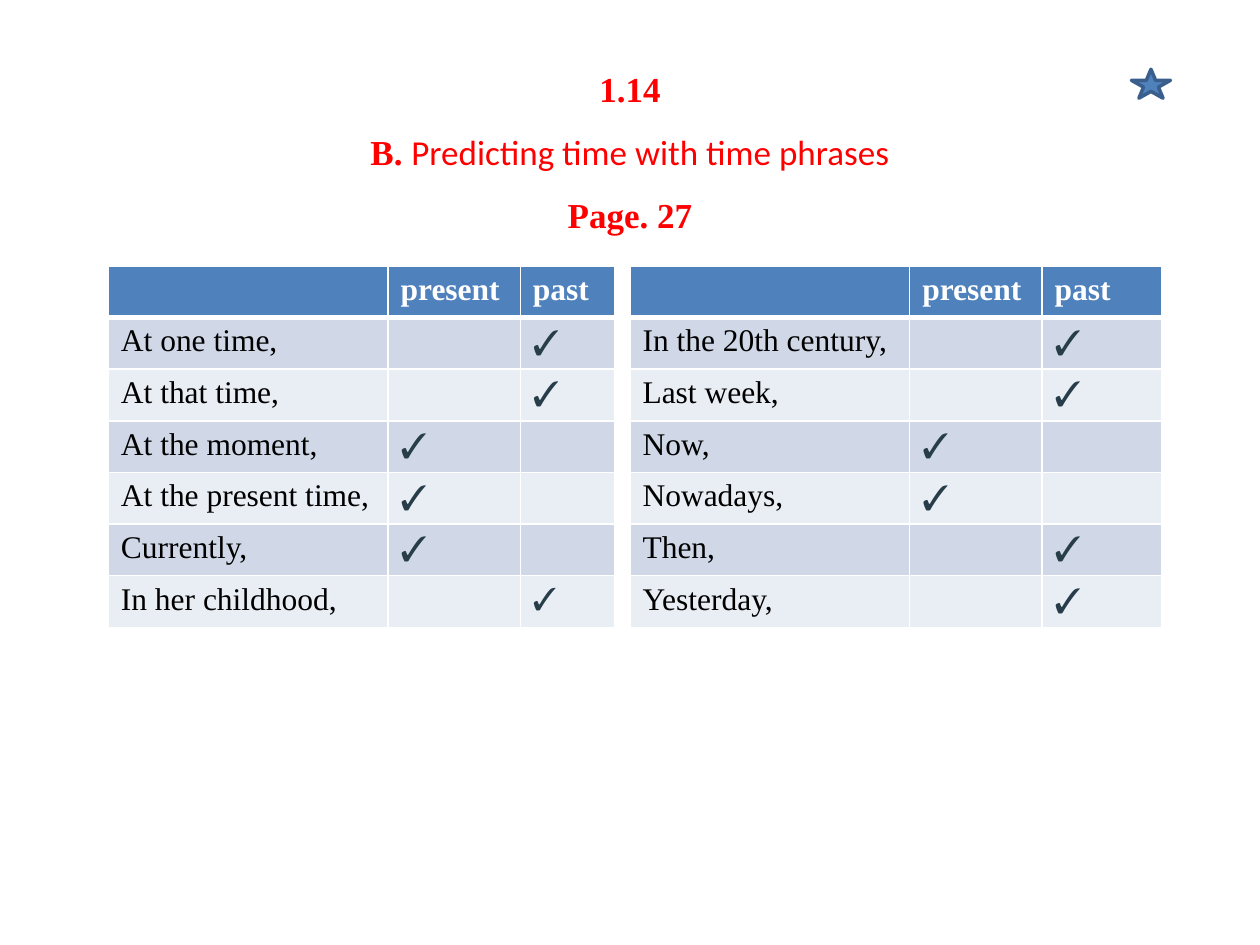
"""Build a slide that sorts time phrases into present and past."""
import pptx
import pptx.dml.color
import pptx.enum.shapes
import pptx.enum.text
import pptx.oxml
import pptx.oxml.ns
import pptx.util
from pptx.util import Inches, Pt

SERIF = "Times New Roman"
TITLE = [
    [("1.14", SERIF, True)],
    [("B. ", SERIF, True), ("Predicting time with time phrases", "Calibri", False)],
    [("Page. 27", SERIF, True)],
]
TENSES = ["present", "past"]
TABLES = [
    {"left": 0.86, "widths": [2.22, 1.05, 0.75], "phrases": [
        ("At one time,", "past", 20),
        ("At that time,", "past", 20),
        ("At the moment,", "present", 20),
        ("At the present time,", "present", 20),
        ("Currently,", "present", 20),
        ("In her childhood,", "past", 18),
    ]},
    {"left": 5, "widths": [2.22, 1.05, 0.95], "phrases": [
        ("In the 20th century,", "past", 20),
        ("Last week,", "past", 20),
        ("Now,", "present", 20),
        ("Nowadays,", "present", 20),
        ("Then,", "past", 20),
        ("Yesterday,", "past", 20),
    ]},
]
TABLE_TOP, ROW_HEIGHT = 2.11, 0.41
BLUE, BANDS = "4F81BD", ["E9EDF4", "D0D8E8"]


def color(value):
    return pptx.dml.color.RGBColor.from_string(value)


def paint(shape, value):
    shape.fill.solid()
    shape.fill.fore_color.rgb = color(value)


def style(span, size, value, bold=False, name=SERIF):
    span.font.name, span.font.size, span.font.bold = name, Pt(size), bold
    span.font.color.rgb = color(value)


def add_borders(cell, row):
    weights = {"lnL": 1, "lnR": 1, "lnT": 3 if row == 1 else 1, "lnB": 3 if row == 0 else 1}
    properties = cell._tc.get_or_add_tcPr()
    for position, (tag, weight) in enumerate(weights.items()):
        border = pptx.oxml.parse_xml(
            f'<a:{tag} {pptx.oxml.ns.nsdecls("a")} w="{Pt(weight)}">'
            '<a:solidFill><a:srgbClr val="FFFFFF"/></a:solidFill>'
            f'</a:{tag}>')
        properties.insert(position, border)


def fill_cell(cell, row, text, size, value, bold):
    paint(cell, BANDS[row % 2] if row else BLUE)
    add_borders(cell, row)
    if text:
        cell.text_frame.text = text
        style(cell.text_frame.paragraphs[0].runs[0], size, value, bold)


def add_title(page):
    box = page.shapes.title
    box.left, box.top, box.width, box.height = 0, 0, Inches(10), Inches(7.5)
    frame = box.text_frame
    frame.word_wrap = True
    frame.auto_size = pptx.enum.text.MSO_AUTO_SIZE.NONE
    frame.vertical_anchor = pptx.enum.text.MSO_ANCHOR.TOP
    frame.margin_top = Inches(0.37)
    for index, line in enumerate(TITLE):
        paragraph = frame.add_paragraph() if index else frame.paragraphs[0]
        paragraph.alignment = pptx.enum.text.PP_ALIGN.CENTER
        paragraph.line_spacing = 1.5
        for text, name, bold in line:
            span = paragraph.add_run()
            span.text = text
            style(span, 20, "FF0000", bold, name)


def add_phrase_table(page, left, widths, phrases):
    count = len(phrases) + 1
    table = page.shapes.add_table(
        count, len(widths), Inches(left), Inches(TABLE_TOP),
        Inches(sum(widths)), Inches(ROW_HEIGHT * count)).table
    table.horz_banding = False
    for column, width in zip(table.columns, widths):
        column.width = Inches(width)
    for row in table.rows:
        row.height = Inches(ROW_HEIGHT)
    for column, heading in enumerate([""] + TENSES):
        fill_cell(table.cell(0, column), 0, heading, 18, "FFFFFF", True)
    for row, (phrase, tense, size) in enumerate(phrases, 1):
        fill_cell(table.cell(row, 0), row, phrase, 18, "000000", False)
        for column, heading in enumerate(TENSES, 1):
            mark = "✓" if heading == tense else ""
            fill_cell(table.cell(row, column), row, mark, size, "273D49", False)


def add_star(page):
    star = page.shapes.add_shape(
        pptx.enum.shapes.MSO_SHAPE.STAR_5_POINT,
        Inches(8.98), Inches(0.55), Inches(0.31), Inches(0.23))
    star.shadow.inherit = False
    paint(star, BLUE)
    star.line.color.rgb = color("3A5F8C")
    star.line.width = Pt(2)


def main():
    deck = pptx.Presentation()
    deck.slide_width, deck.slide_height = Inches(10), Inches(7.5)
    page = deck.slides.add_slide(deck.slide_layouts[5])
    add_title(page)
    for table in TABLES:
        add_phrase_table(page, **table)
    add_star(page)
    deck.save("out.pptx")


if __name__ == "__main__":
    main()
